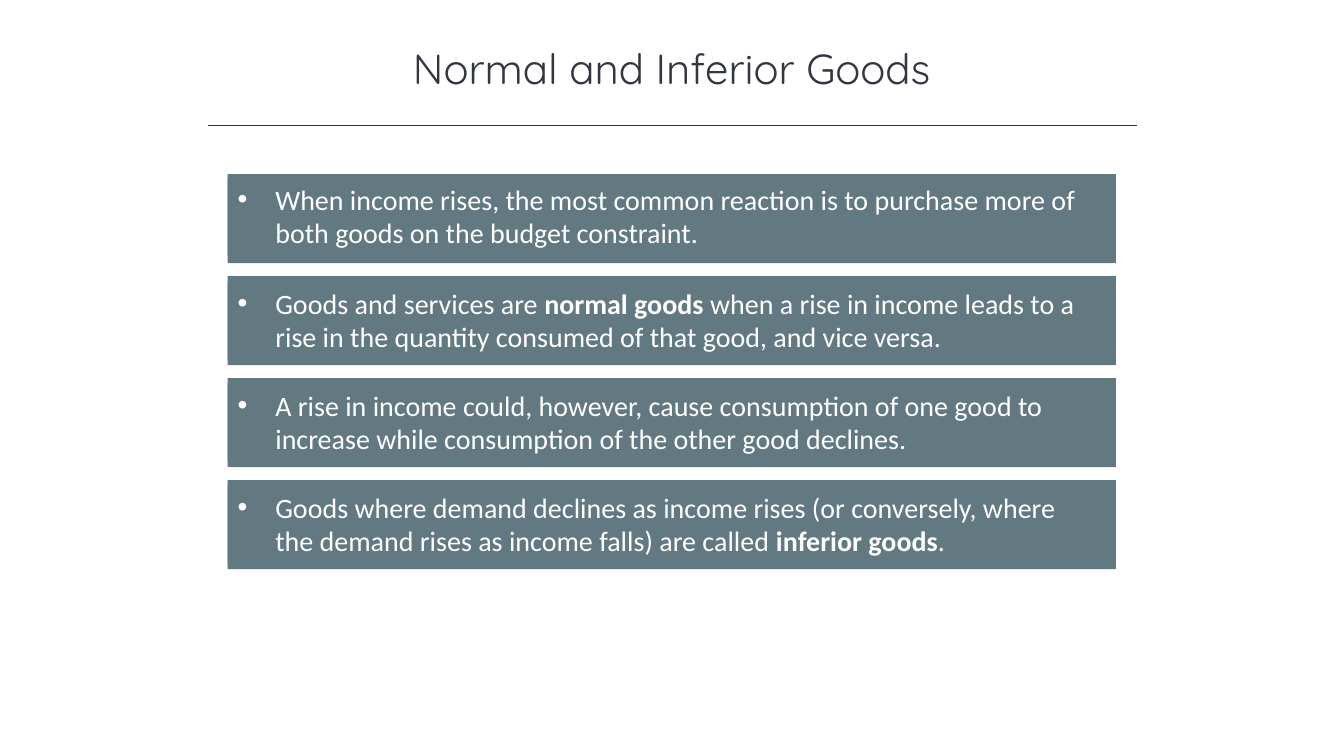
import pptx
import pptx.util
import pptx.dml.color
import pptx.enum.shapes
import pptx.enum.text
import lxml.etree
from pptx.util import Cm, Pt

TITLE = "Normal and Inferior Goods"
# Each point is a list of (text, bold) runs
POINTS = [
    [("When income rises, the most common reaction is to purchase more of "
      "both goods on the budget constraint.", False)],
    [("Goods and services are ", False), ("normal goods ", True),
     ("when a rise in income leads to a rise in the quantity consumed of "
      "that good, and vice versa.", False)],
    [("A rise in income could, however, cause consumption of one good to "
      "increase while consumption of the other good declines.", False)],
    [("Goods where demand declines as income rises (or conversely, where "
      "the demand rises as income falls) are called ", False),
     ("inferior goods", True), (".", False)],
]
COLORS = {"ink": "323542", "panel": "627981", "text": "FFFFFF"}

# Layout in centimetres
PANEL_LEFT, PANEL_TOP, PANEL_WIDTH, PANEL_HEIGHT = 5.74, 4.39, 22.38, 2.24
PANEL_PITCH = 2.57
TEXT_WIDTH, TEXT_HEIGHT = 21.69, 1.96
TEXT_OFFSETS = [0.08, 0.13, 0.13, 0.13]
INDENT = Cm(0.95)


def color(name):
    return pptx.dml.color.RGBColor.from_string(COLORS[name])


def add_run(p, text, font, size, color_name, bold=False):
    r = p.add_run()
    r.text = text
    r.font.name = font
    r.font.size = Pt(size)
    r.font.bold = bold
    r.font.color.rgb = color(color_name)


def add_panel(group, top, width, height):
    sp = group.shapes.add_shape(pptx.enum.shapes.MSO_SHAPE.RECTANGLE,
                                Cm(PANEL_LEFT), Cm(top), Cm(width), Cm(height))
    sp.shadow.inherit = False
    sp.fill.solid()
    sp.fill.fore_color.rgb = color("panel")
    sp.line.fill.background()
    return sp


def add_bullet(p):
    pPr = p._p.get_or_add_pPr()
    pPr.set("marL", str(INDENT))
    pPr.set("indent", str(-INDENT))
    for tag, key, value in [("buFont", "typeface", "Arial"), ("buChar", "char", "•")]:
        lxml.etree.SubElement(pPr, pptx.oxml.ns.qn("a:" + tag)).set(key, value)


prs = pptx.Presentation()
prs.slide_width, prs.slide_height = Cm(33.87), Cm(19.05)
s = prs.slides.add_slide(prs.slide_layouts[6])

# Title
tf = s.shapes.add_textbox(Cm(4.23), Cm(0.94), Cm(25.4), Cm(1.55)).text_frame
tf.word_wrap = True
p = tf.paragraphs[0]
p.alignment = pptx.enum.text.PP_ALIGN.CENTER
add_run(p, TITLE, "Quicksand", 30, "ink")

# Rule under the title
rule = s.shapes.add_connector(pptx.enum.shapes.MSO_CONNECTOR.STRAIGHT,
                              Cm(5.23), Cm(3.16), Cm(28.65), Cm(3.16))
rule.line.color.rgb = color("ink")
rule.line.width = Pt(1)
lxml.etree.SubElement(rule._element.spPr, pptx.oxml.ns.qn("a:effectLst"))

# Panels, each grouped with its bullet text
for i, (runs, offset) in enumerate(zip(POINTS, TEXT_OFFSETS)):
    top = PANEL_TOP + i * PANEL_PITCH
    group = s.shapes.add_group_shape()
    add_panel(group, top, PANEL_WIDTH, PANEL_HEIGHT)
    tf = add_panel(group, top + offset, TEXT_WIDTH, TEXT_HEIGHT).text_frame
    tf.word_wrap = True
    tf.vertical_anchor = pptx.enum.text.MSO_ANCHOR.TOP
    p = tf.paragraphs[0]
    p.alignment = pptx.enum.text.PP_ALIGN.LEFT
    add_bullet(p)
    for text, bold in runs:
        add_run(p, text, "Calibri", 20, "text", bold)

prs.save("out.pptx")
